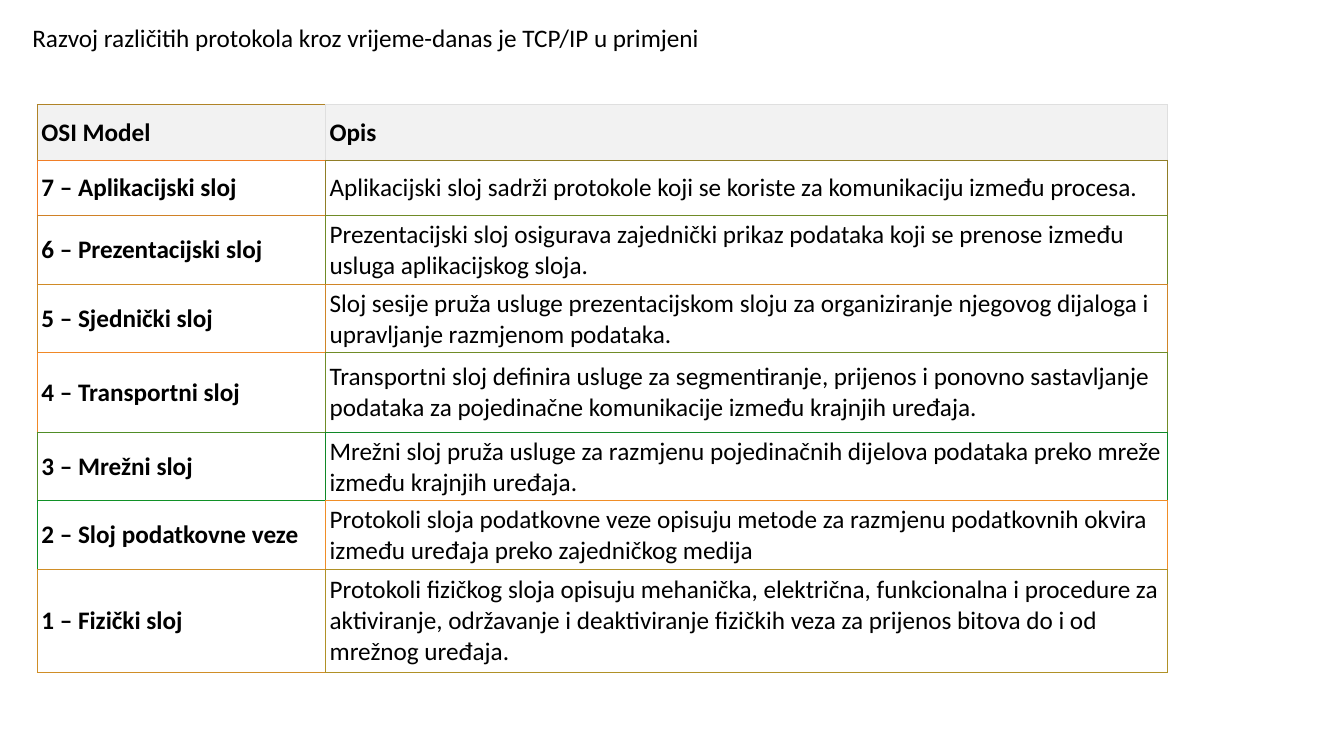
from lxml import etree
from pptx import Presentation
from pptx.dml.color import RGBColor
from pptx.enum.text import MSO_ANCHOR, MSO_AUTO_SIZE, PP_ALIGN
from pptx.oxml.ns import qn
from pptx.util import Inches, Pt

LEFT = PP_ALIGN.LEFT
MIDDLE = MSO_ANCHOR.MIDDLE
FIT_SHAPE = MSO_AUTO_SIZE.SHAPE_TO_FIT_TEXT

BLACK = RGBColor(0x00, 0x00, 0x00)
WHITE = RGBColor(0xFF, 0xFF, 0xFF)
HEADER_GREY = RGBColor(0xF2, 0xF2, 0xF2)

FONT = "Calibri"
BORDER_WIDTH = Pt(0.75)
CELL_MARGIN = Inches(0.04)
COLUMN_WIDTHS = (2.86, 8.35)
ROW_HEIGHTS = (0.55, 0.55, 0.67, 0.67, 0.79, 0.67, 0.67, 1.02)

TITLE = "Razvoj različitih protokola kroz vrijeme-danas je TCP/IP u primjeni"
ROWS = (
    ("OSI Model", "Opis"),
    ("7 – Aplikacijski sloj",
     "Aplikacijski sloj sadrži protokole koji se koriste za komunikaciju "
     "između procesa."),
    ("6 – Prezentacijski sloj",
     "Prezentacijski sloj osigurava zajednički prikaz podataka koji se "
     "prenose između usluga aplikacijskog sloja."),
    ("5 – Sjednički sloj",
     "Sloj sesije pruža usluge prezentacijskom sloju za organiziranje "
     "njegovog dijaloga i upravljanje razmjenom podataka."),
    ("4 – Transportni sloj",
     "Transportni sloj definira usluge za segmentiranje, prijenos i ponovno "
     "sastavljanje podataka za pojedinačne komunikacije između krajnjih "
     "uređaja."),
    ("3 – Mrežni sloj",
     "Mrežni sloj pruža usluge za razmjenu pojedinačnih dijelova podataka "
     "preko mreže između krajnjih uređaja."),
    ("2 – Sloj podatkovne veze",
     "Protokoli sloja podatkovne veze opisuju metode za razmjenu podatkovnih "
     "okvira između uređaja preko zajedničkog medija"),
    ("1 – Fizički sloj",
     "Protokoli fizičkog sloja opisuju mehanička, električna, funkcionalna i "
     "procedure za aktiviranje, održavanje i deaktiviranje fizičkih veza za "
     "prijenos bitova do i od mrežnog uređaja."),
)
# Colour of the left and top edge of each cell
EDGE_COLOURS = [
    [RGBColor.from_string(colour) for colour in pair]
    for pair in (
        ("B08327", "DFDFDF"), ("F07E27", "907E27"), ("D08127", "708B27"),
        ("D08B27", "D08527"), ("F08827", "708C27"), ("508D27", "108827"),
        ("109127", "F08D27"), ("D08E27", "B09127"),
    )
]


def write_text(text_frame, text, size=18, bold=False, colour=BLACK):
    paragraph = text_frame.paragraphs[0]
    paragraph.alignment = LEFT
    run = paragraph.add_run()
    run.text = text
    run.font.name = FONT
    run.font.size = Pt(size)
    run.font.bold = bold
    run.font.color.rgb = colour


def set_borders(cell, **colours):
    """Draw the edges given as L, R, T or B in that order, under the fill."""
    properties = cell._tc.get_or_add_tcPr()
    for position, (side, colour) in enumerate(colours.items()):
        line = etree.Element(qn(f"a:ln{side}"), w=str(BORDER_WIDTH))
        fill = etree.SubElement(line, qn("a:solidFill"))
        etree.SubElement(fill, qn("a:srgbClr"), val=str(colour))
        properties.insert(position, line)


def add_title(slide):
    title = slide.shapes.title
    title.left, title.top = Inches(0.22), Inches(0.17)
    title.width, title.height = Inches(6.83), Inches(0.4)
    title.text_frame.word_wrap = False
    title.text_frame.auto_size = FIT_SHAPE
    write_text(title.text_frame, TITLE)


def fill_cell(table, row, column):
    """Neighbouring cells share the colour of their common edge."""
    cell = table.cell(row, column)
    cell.vertical_anchor = MIDDLE
    cell.margin_left = cell.margin_right = CELL_MARGIN
    cell.margin_top = cell.margin_bottom = CELL_MARGIN
    cell.fill.solid()
    cell.fill.fore_color.rgb = HEADER_GREY if row == 0 else WHITE
    write_text(cell.text_frame, ROWS[row][column],
               bold=row == 0 or column == 0)
    own = EDGE_COLOURS[row][column]
    right = EDGE_COLOURS[row][-1]
    below = EDGE_COLOURS[min(row + 1, len(ROWS) - 1)][column]
    set_borders(cell, L=own, R=right, T=own, B=below)


def add_layer_table(slide):
    frame = slide.shapes.add_table(
        len(ROWS), len(COLUMN_WIDTHS), Inches(0.37), Inches(1.04),
        Inches(sum(COLUMN_WIDTHS)), Inches(sum(ROW_HEIGHTS)))
    table = frame.table
    table.first_row = table.horz_banding = False
    for column, width in enumerate(COLUMN_WIDTHS):
        table.columns[column].width = Inches(width)
    for row, height in enumerate(ROW_HEIGHTS):
        table.rows[row].height = Inches(height)
        for column in range(len(COLUMN_WIDTHS)):
            fill_cell(table, row, column)


def main():
    presentation = Presentation()
    presentation.slide_width = Inches(13.33)
    presentation.slide_height = Inches(7.5)
    title_only = presentation.slide_layouts.get_by_name("Title Only")
    slide = presentation.slides.add_slide(title_only)
    add_title(slide)
    add_layer_table(slide)
    presentation.save("out.pptx")


if __name__ == "__main__":
    main()
